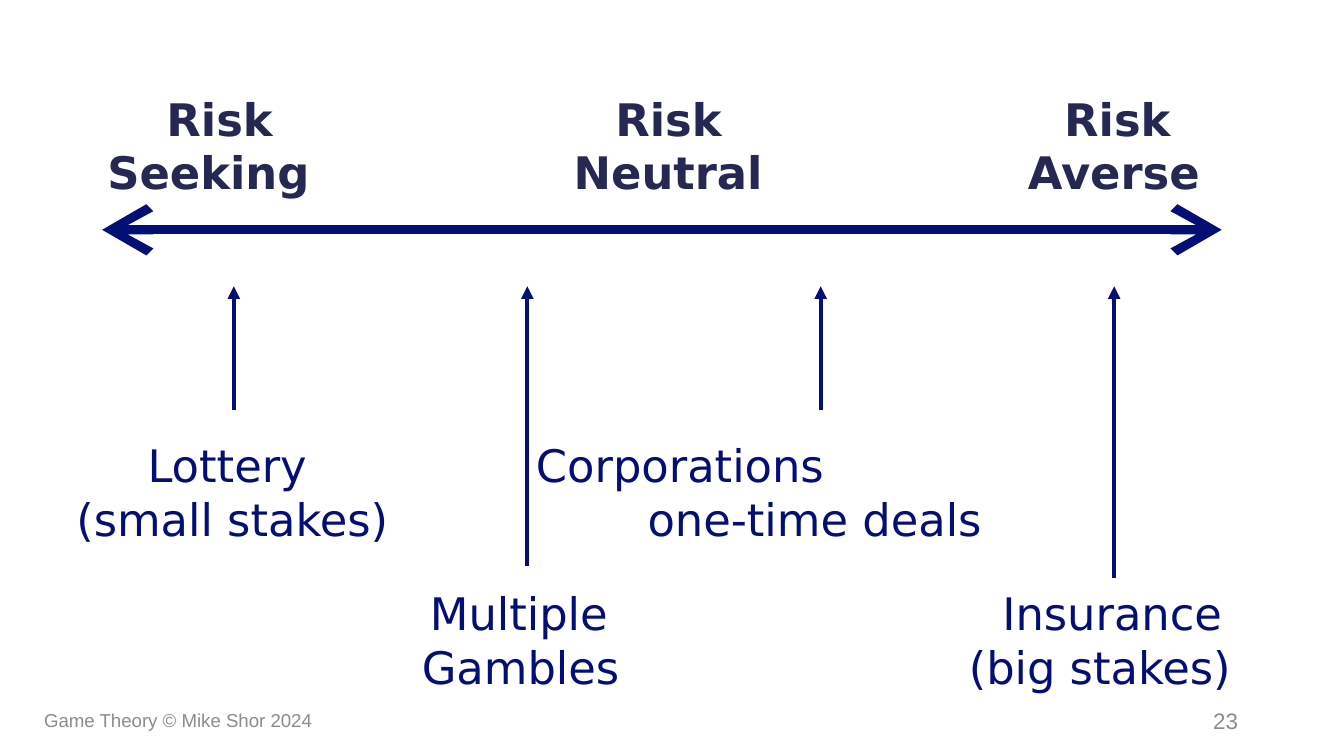
from lxml import etree
from pptx import Presentation
from pptx.dml.color import RGBColor
from pptx.enum.shapes import MSO_CONNECTOR
from pptx.enum.text import MSO_ANCHOR, PP_ALIGN
from pptx.oxml.ns import qn
from pptx.util import Inches, Pt

NAVY = RGBColor(0x04, 0x0F, 0x76)
SLATE = RGBColor(0x24, 0x28, 0x52)
GRAY = RGBColor(0x8C, 0x8C, 0x8C)
INSET = 0.1  # default side margin of a text box

# Label rows: box, colour, bold, lines of (word, left edge on the slide)
LABEL_ROWS = [
    ((0.54, 0.63, 8.65, 0.91), SLATE, True, [
        [("Risk", 1.24), ("Risk", 4.58), ("Risk", 7.92)],
        [("Seeking", 0.8), ("Neutral", 4.27), ("Averse", 7.65)],
    ]),
    ((0.26, 3.21, 9.36, 0.9), NAVY, False, [
        [("Lottery", 1.1), ("Corporations", 3.99)],
        [("(small stakes)", 0.57), ("one-time deals", 4.82)],
    ]),
    ((0.26, 4.31, 9.58, 0.9), NAVY, False, [
        [("Multiple", 3.2), ("Insurance", 7.46)],
        [("Gambles", 3.14), ("(big stakes)", 7.21)],
    ]),
]

# Risk scale, and the bottoms of the evenly spaced arrows that point to it
SCALE_LEFT, SCALE_RIGHT, SCALE_Y = 0.76, 9.09, 1.71
ARROW_LEFT, ARROW_RIGHT, ARROW_TOP = 1.74, 8.29, 2.13
ARROW_BOTTOMS = [3.05, 4.21, 3.05, 4.3]

# Footer: text, box, size, alignment
FOOTER = [
    ("23", (7.06, 5.21, 2.25, 0.3), 12, PP_ALIGN.RIGHT),
    ("Game Theory © Mike Shor 2024", (0.23, 5.21, 3.38, 0.3), 10, PP_ALIGN.LEFT),
]


def add_text_box(s, box):
    tf = s.shapes.add_textbox(*map(Inches, box)).text_frame
    tf.word_wrap = True
    return tf


def set_text(p, text, name, size, color, bold=False):
    p.text = text
    p.font.name, p.font.size, p.font.bold = name, Pt(size), bold
    p.font.color.rgb = color


def add_tab_stops(p, stops):
    tabs = etree.Element(qn("a:tabLst"))
    for stop in stops:
        etree.SubElement(tabs, qn("a:tab"), pos=str(Inches(stop)), algn="l")
    p._p.get_or_add_pPr().insert(0, tabs)


def add_line(s, x1, y1, x2, y2, width, size="med", **ends):
    c = s.shapes.add_connector(MSO_CONNECTOR.STRAIGHT,
                               Inches(x1), Inches(y1), Inches(x2), Inches(y2))
    c.line.color.rgb, c.line.width = NAVY, Pt(width)
    ln = c.line._get_or_add_ln()
    for tag, kind in ends.items():
        etree.SubElement(ln, qn(f"a:{tag}"), type=kind, w=size, len=size)
    etree.SubElement(c._element.spPr, qn("a:effectLst"))


prs = Presentation()
prs.slide_width = Inches(10)
prs.slide_height = prs.slide_width * 9 // 16
s = prs.slides.add_slide(prs.slide_layouts[6])

# Footer
for text, box, size, align in FOOTER:
    tf = add_text_box(s, box)
    tf.vertical_anchor = MSO_ANCHOR.MIDDLE
    p = tf.paragraphs[0]
    set_text(p, text, "Arial", size, GRAY)
    p.alignment = align

# Scale and arrows
add_line(s, SCALE_LEFT, SCALE_Y, SCALE_RIGHT, SCALE_Y, 5, "lg",
         headEnd="arrow", tailEnd="arrow")
step = (ARROW_RIGHT - ARROW_LEFT) / (len(ARROW_BOTTOMS) - 1)
for i, bottom in enumerate(ARROW_BOTTOMS):
    x = ARROW_LEFT + i * step
    add_line(s, x, bottom, x, ARROW_TOP, 2.25, tailEnd="triangle")

# Labels, each word on its own tab stop
for box, color, bold, lines in LABEL_ROWS:
    tf = add_text_box(s, box)
    for i, line in enumerate(lines):
        p = tf.add_paragraph() if i else tf.paragraphs[0]
        text = "".join(f"\t{word}" for word, _ in line)
        set_text(p, text, "DejaVu Sans", 24, color, bold)
        add_tab_stops(p, [x - box[0] - INSET for _, x in line])

prs.save("out.pptx")
